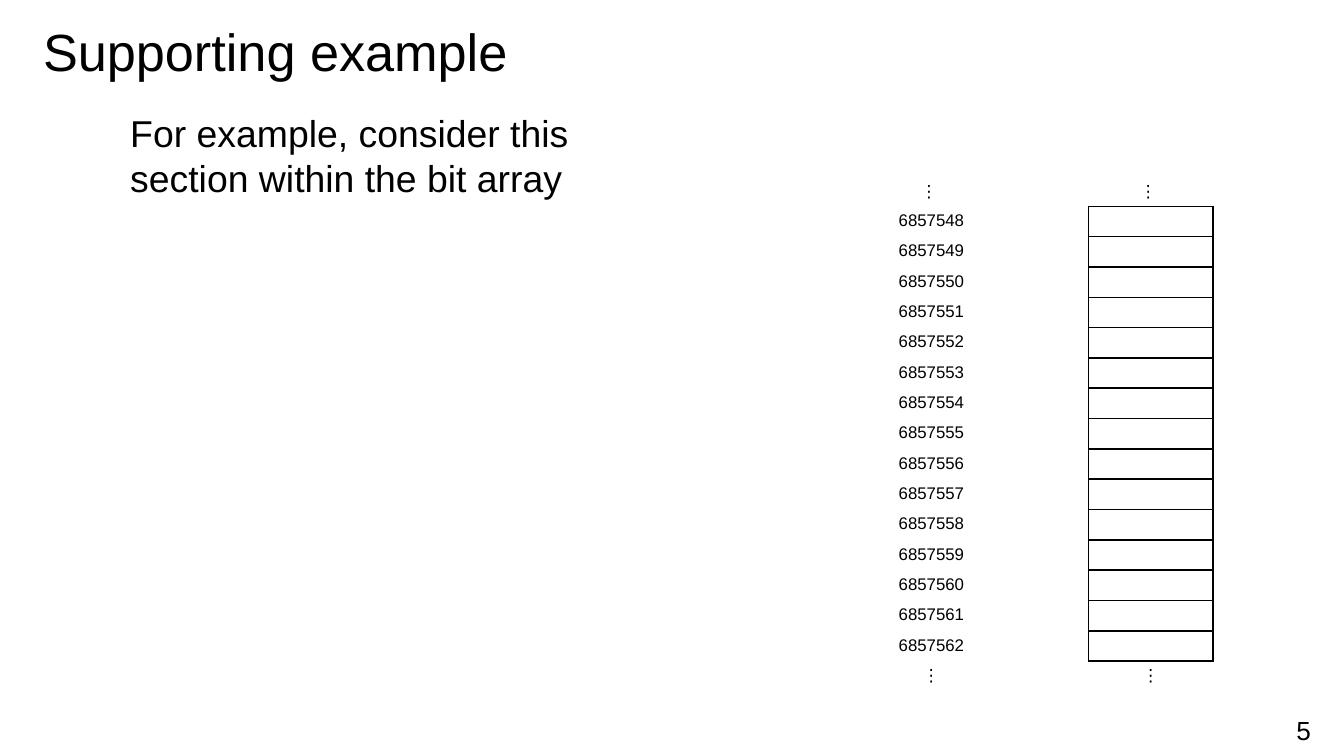
import pptx
import pptx.dml.color
import pptx.enum.text
import pptx.oxml
import pptx.oxml.ns
import pptx.util

Pt = pptx.util.Pt
ALIGN = pptx.enum.text.PP_ALIGN
ANCHOR = pptx.enum.text.MSO_ANCHOR
COLORS = {"text": "000000", "border": "000000", "background": "FFFFFF"}
FIRST_ADDRESS = 6857548
ADDRESS_COUNT = 15


class SlideBuilder:
    font = "Arial"
    cell_size = 9
    border_width = 1

    def __init__(self, slide):
        self.slide = slide
        fill = slide.background.fill
        fill.solid()
        fill.fore_color.rgb = self.color("background")

    def color(self, name):
        return pptx.dml.color.RGBColor.from_string(COLORS[name])

    def add_lines(self, paragraph, lines, size, align=ALIGN.LEFT):
        """Add one run per line, with line breaks between them."""
        paragraph.alignment = align
        for index, line in enumerate(lines):
            if index:
                paragraph.add_line_break()
            run = paragraph.add_run()
            run.text = line
            run.font.size = Pt(size)
            run.font.name = self.font
            run.font.color.rgb = self.color("text")

    def title(self, text, left, top, width, height):
        heading = self.slide.shapes.title
        heading.left, heading.top = Pt(left), Pt(top)
        heading.width, heading.height = Pt(width), Pt(height)
        heading.text_frame.vertical_anchor = ANCHOR.MIDDLE
        self.add_lines(heading.text_frame.paragraphs[0], [text], 28)

    def text(self, lines, left, top, width, height, size, align=ALIGN.LEFT, indent=0):
        box = self.slide.shapes.add_textbox(Pt(left), Pt(top), Pt(width), Pt(height))
        box.text_frame.word_wrap = True
        paragraph = box.text_frame.paragraphs[0]
        self.add_lines(paragraph, lines, size, align)
        if indent:
            paragraph._p.get_or_add_pPr().set("marL", str(Pt(indent)))

    def border(self, cell, sides):
        """Draw the given sides of a cell and clear the others."""
        properties = cell._tc.get_or_add_tcPr()
        namespace = pptx.oxml.ns.nsdecls("a")
        for index, side in enumerate("LRTB"):
            if side in sides:
                paint = f'<a:solidFill><a:srgbClr val="{COLORS["border"]}"/></a:solidFill>'
            else:
                paint = "<a:noFill/>"
            line = f'<a:ln{side} {namespace} w="{Pt(self.border_width)}">{paint}</a:ln{side}>'
            properties.insert(index, pptx.oxml.parse_xml(line))

    def cell(self, cell, text, sides, anchor):
        cell.fill.background()
        cell.margin_left = cell.margin_right = Pt(6)
        cell.margin_top = cell.margin_bottom = Pt(2.7)
        cell.vertical_anchor = anchor
        paragraph = cell.text_frame.paragraphs[0]
        if text:
            self.add_lines(paragraph, [text], self.cell_size, ALIGN.CENTER)
        else:
            # The size of an empty paragraph keeps its row low.
            end = f'<a:endParaRPr {pptx.oxml.ns.nsdecls("a")} sz="{self.cell_size * 100}"/>'
            paragraph._p.append(pptx.oxml.parse_xml(end))
        self.border(cell, sides)

    def table(self, rows, left, top, widths, row_height):
        """Each row is (address text, bit text, bit cell sides, anchor)."""
        frame = self.slide.shapes.add_table(
            len(rows), len(widths), Pt(left), Pt(top),
            Pt(sum(widths)), Pt(row_height * len(rows)))
        table = frame.table
        table.first_row = table.horz_banding = False
        for column, width in zip(table.columns, widths):
            column.width = Pt(width)
        for index, (address, bit, sides, anchor) in enumerate(rows):
            table.rows[index].height = Pt(row_height)
            address_sides = "R" if sides == "LRTB" else ""
            self.cell(table.cell(index, 0), address, address_sides, anchor)
            self.cell(table.cell(index, 1), bit, sides, anchor)


def main():
    presentation = pptx.Presentation()
    presentation.slide_width, presentation.slide_height = Pt(720), Pt(405)
    builder = SlideBuilder(presentation.slides.add_slide(presentation.slide_layouts[5]))

    builder.title("Supporting example", 15.84, 5.76, 701.28, 42.48)
    builder.text(["For example, consider this", "section within the bit array"],
                 31.68, 55.44, 659.52, 315.36, 20, indent=31)

    bit_array = [("⋮ ", "⋮ ", "B", ANCHOR.MIDDLE)]
    for address in range(FIRST_ADDRESS, FIRST_ADDRESS + ADDRESS_COUNT):
        bit_array.append((str(address), "", "LRTB", ANCHOR.TOP))
    bit_array.append(("⋮", "⋮", "T", ANCHOR.TOP))
    builder.table(bit_array, 414.72, 94.32, [168.5, 66.5], 15.75)

    builder.text(["5"], 676.8, 379.44, 43.2, 21.6, 14, ALIGN.CENTER)
    presentation.save("out.pptx")


if __name__ == "__main__":
    main()
